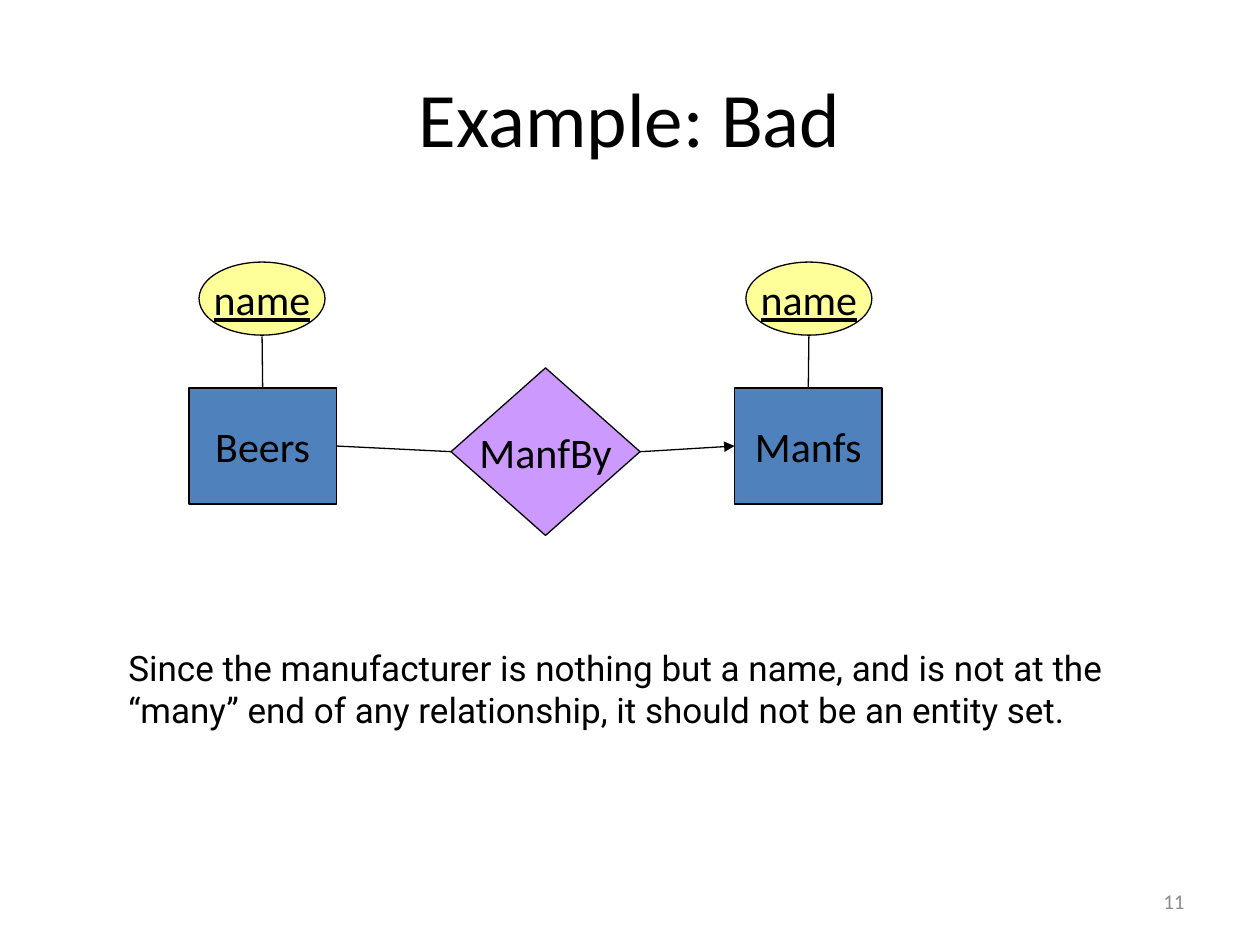
from lxml import etree
from pptx import Presentation
from pptx import util as u
from pptx.dml.color import RGBColor
from pptx.enum import shapes, text
from pptx.oxml.ns import qn

COLORS = {"ink": "000000", "entity": "4F81BD", "relationship": "CC99FF",
          "attribute": "FFFF99", "number": "8C8C8C"}
SHAPE = shapes.MSO_SHAPE
ALIGN = text.PP_ALIGN
MIDDLE = text.MSO_ANCHOR.MIDDLE

deck = Presentation()
deck.slide_width, deck.slide_height = u.Inches(10), u.Inches(7.5)
page = deck.slides.add_slide(deck.slide_layouts[6])


def write(box, words, size, align, font="Calibri", color="ink", anchor=MIDDLE,
          wrap=True, underline=None):
    frame = box.text_frame
    frame.word_wrap, frame.vertical_anchor = wrap, anchor
    para = frame.paragraphs[0]
    para.alignment = align
    span = para.add_run()
    span.text = words
    for name, value in {"name": font, "size": u.Pt(size), "underline": underline}.items():
        setattr(span.font, name, value)
    span.font.color.rgb = RGBColor.from_string(COLORS[color])


def link(x1, y1, x2, y2, arrow=False):
    """Add a thin black line between two points, with an arrowhead at its end if asked."""
    line = page.shapes.add_connector(shapes.MSO_CONNECTOR.STRAIGHT,
                                     *map(u.Inches, (x1, y1, x2, y2)))
    line.line.width = u.Pt(0.75)
    line.line.color.rgb = RGBColor.from_string(COLORS["ink"])
    if arrow:
        etree.SubElement(line.line._get_or_add_ln(), qn("a:tailEnd"), type="triangle")
    etree.SubElement(line._element.spPr, qn("a:effectLst"))
    return line


# Title, explanation and page number
for words, place, style in [
    ("11", (7.17, 6.95, 2.33, 0.4), {"size": 12, "align": ALIGN.RIGHT, "color": "number"}),
    ("Example: Bad", (0.5, 0.3, 9, 1.25), {"size": 44, "align": ALIGN.CENTER}),
    ("Since the manufacturer is nothing but a name, and is not at the “many” end "
     "of any relationship, it should not be an entity set.", (0.92, 5.08, 8.58, 0.77),
     {"size": 20, "align": ALIGN.LEFT, "font": "Roboto", "anchor": text.MSO_ANCHOR.TOP}),
]:
    write(page.shapes.add_textbox(*map(u.Inches, place)), words, **style)

# Entity-relationship diagram
nodes = []
for words, kind, color, place in [
    ("Beers", SHAPE.RECTANGLE, "entity", (1.5, 3.08, 1.17, 0.92)),
    ("Manfs", SHAPE.RECTANGLE, "entity", (5.83, 3.08, 1.17, 0.92)),
    ("ManfBy", SHAPE.DIAMOND, "relationship", (3.58, 2.92, 1.5, 1.33)),
    ("name", SHAPE.OVAL, "attribute", (1.58, 2.08, 1, 0.58)),
    ("name", SHAPE.OVAL, "attribute", (5.92, 2.08, 1, 0.58)),
]:
    node = page.shapes.add_shape(kind, *map(u.Inches, place))
    node.shadow.inherit = False
    node.fill.solid()
    node.fill.fore_color.rgb = RGBColor.from_string(COLORS[color])
    node.line.width = u.Pt(0.75)
    node.line.color.rgb = RGBColor.from_string(COLORS["ink"])
    write(node, words, 24, ALIGN.CENTER, wrap=False, underline=color == "attribute" or None)
    nodes.append(node)
beers, manfs, manf_by = nodes[:3]

# Each entity hangs below its key attribute
for entity, center in [(beers, 2.08), (manfs, 6.42)]:
    link(center, 2.67, center, 3.08).end_connect(entity, 0)

# The relationship joins the two entities
axis = 3.58
beers_link = link(3.58, axis, 2.67, axis)
beers_link.begin_connect(manf_by, 1)
beers_link.end_connect(beers, 3)
link(5.08, axis, 5.17, axis).begin_connect(manf_by, 3)
link(5.17, axis, 5.83, axis, arrow=True).end_connect(manfs, 1)

deck.save("out.pptx")
